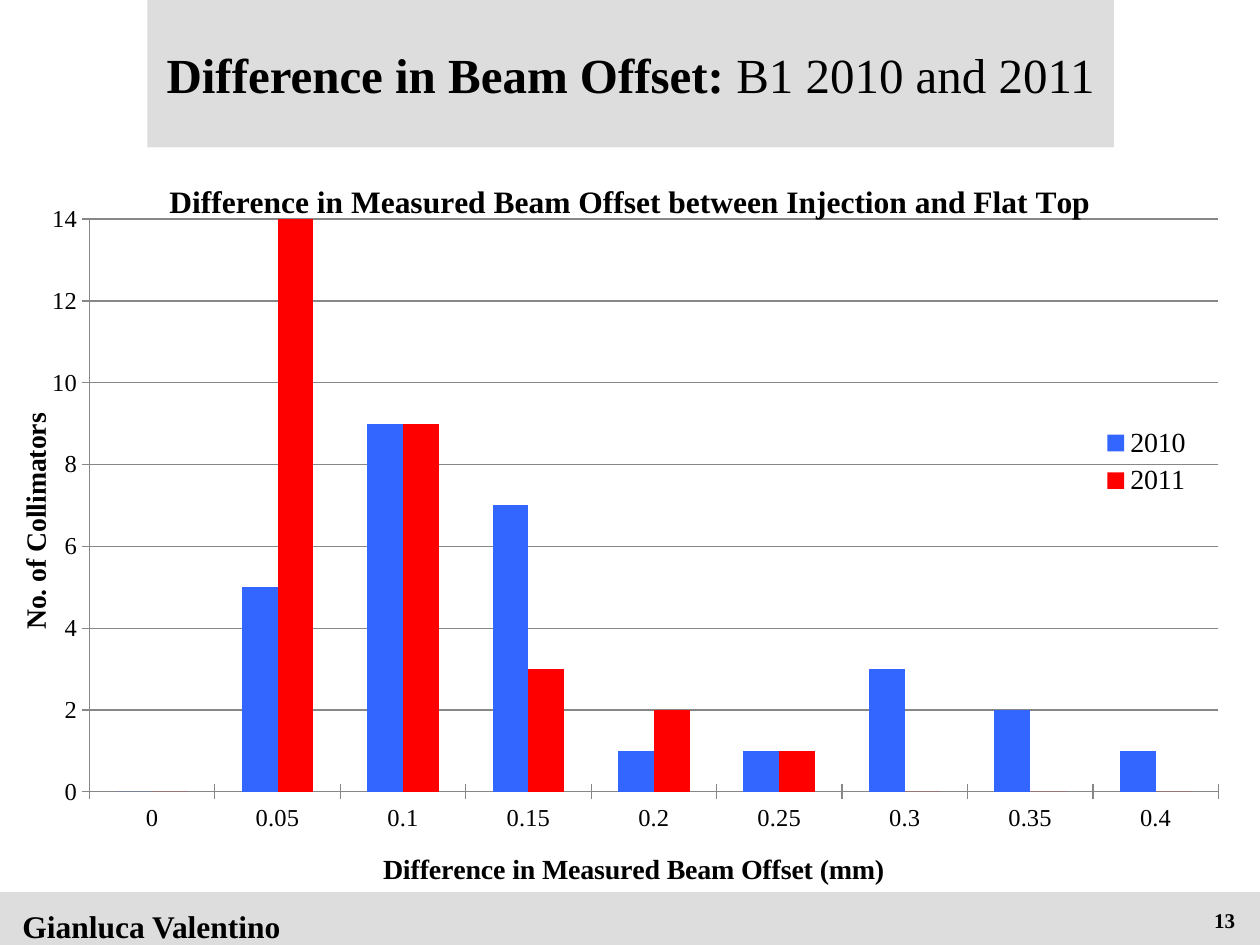
from lxml import etree
from pptx import Presentation
from pptx.chart.data import CategoryChartData
from pptx.dml.color import RGBColor
from pptx.enum.chart import XL_CHART_TYPE, XL_LEGEND_POSITION, XL_TICK_MARK
from pptx.enum.shapes import MSO_SHAPE
from pptx.enum.text import MSO_ANCHOR, PP_ALIGN
from pptx.oxml.ns import qn
from pptx.util import Inches, Pt

COLUMNS = XL_CHART_TYPE.COLUMN_CLUSTERED
LEGEND_RIGHT = XL_LEGEND_POSITION.RIGHT
CROSS = XL_TICK_MARK.CROSS
MIDDLE = MSO_ANCHOR.MIDDLE
LEFT, CENTER, RIGHT = PP_ALIGN.LEFT, PP_ALIGN.CENTER, PP_ALIGN.RIGHT
TITLE_ONLY = 5

FONT = "Times New Roman"
BLACK, BAND, AXIS = "000000", "DDDDDD", "878787"
CATEGORIES = ["0", "0.05", "0.1", "0.15", "0.2", "0.25", "0.3", "0.35", "0.4"]
SERIES = [
    ("2010", "3366FF", [0, 5, 9, 7, 1, 1, 3, 2, 1]),
    ("2011", "FF0000", [0, 14, 9, 3, 2, 1, 0, 0, 0]),
]


def rgb(color):
    return RGBColor.from_string(color)


def set_layout(element, index, inner=False, **place):
    """Place a chart part by fractions of the chart; index is the schema position."""
    for old in element.findall(qn("c:layout")):
        element.remove(old)
    layout = etree.Element(qn("c:layout"))
    manual = etree.SubElement(layout, qn("c:manualLayout"))
    if inner:
        etree.SubElement(manual, qn("c:layoutTarget"), val="inner")
    for name in ("xMode", "yMode"):
        etree.SubElement(manual, qn(f"c:{name}"), val="edge")
    for name, value in place.items():
        etree.SubElement(manual, qn(f"c:{name}"), val=str(value))
    element.insert(index, layout)


class SlideBuilder:
    def __init__(self, deck):
        self.slide = deck.slides.add_slide(deck.slide_layouts[TITLE_ONLY])

    def style(self, font, size, bold):
        font.name, font.size, font.bold = FONT, Pt(size), bold
        font.color.rgb = rgb(BLACK)

    def band(self, left, top, width, height):
        band = self.slide.shapes.add_shape(
            MSO_SHAPE.RECTANGLE, Inches(left), Inches(top), Inches(width), Inches(height))
        band.shadow.inherit = False
        band.fill.solid()
        band.fill.fore_color.rgb = rgb(BAND)
        band.line.fill.background()

    def title(self, left, top, width, height, lead, rest):
        title = self.slide.shapes.title
        title.left, title.top = Inches(left), Inches(top)
        title.width, title.height = Inches(width), Inches(height)
        title.fill.solid()
        title.fill.fore_color.rgb = rgb(BAND)
        title.text_frame.vertical_anchor = MIDDLE
        para = title.text_frame.paragraphs[0]
        para.alignment = CENTER
        for text, bold in ((lead, True), (rest, False)):
            span = para.add_run()
            span.text = text
            self.style(span.font, 28, bold)

    def text(self, left, top, width, height, text, size, align):
        box = self.slide.shapes.add_textbox(
            Inches(left), Inches(top), Inches(width), Inches(height))
        box.text_frame.word_wrap = True
        para = box.text_frame.paragraphs[0]
        para.text = text
        para.alignment = align
        self.style(para.font, size, True)

    def chart_title(self, owner, text, size, x, y):
        """Title a chart or an axis."""
        title = owner.chart_title if hasattr(owner, "chart_title") else owner.axis_title
        para = title.text_frame.paragraphs[0]
        para.text = text
        self.style(para.font, size, True)
        set_layout(title._element, 1, x=x, y=y)

    def axis(self, axis):
        axis.major_tick_mark = XL_TICK_MARK.OUTSIDE
        axis.minor_tick_mark = XL_TICK_MARK.NONE
        axis.format.line.color.rgb = rgb(AXIS)
        self.style(axis.tick_labels.font, 14, False)

    def column_chart(self, left, top, width, height):
        data = CategoryChartData()
        data.categories = CATEGORIES
        for name, _, values in SERIES:
            data.add_series(name, values)
        chart = self.slide.shapes.add_chart(
            COLUMNS, Inches(left), Inches(top), Inches(width), Inches(height), data).chart
        self.style(chart.font, 10, False)

        plot = chart.plots[0]
        plot.vary_by_categories = False
        plot.gap_width, plot.overlap = 150, 0
        for series, (_, color, _) in zip(plot.series, SERIES):
            series.format.fill.solid()
            series.format.fill.fore_color.rgb = rgb(color)
        set_layout(chart._chartSpace.chart.plotArea, 0, inner=True,
                   x=0.071, y=0.097, w=0.896, h=0.774)

        offsets, counts = chart.category_axis, chart.value_axis
        for axis in (offsets, counts):
            self.axis(axis)
            axis.major_tick_mark = CROSS
        counts.minimum_scale, counts.maximum_scale, counts.major_unit = 0, 14, 2
        counts.major_gridlines.format.line.color.rgb = rgb(AXIS)

        self.chart_title(
            chart, "Difference in Measured Beam Offset between Injection and Flat Top",
            18, 0.13, 0.04)
        self.chart_title(offsets, "Difference in Measured Beam Offset (mm)", 16, 0.3, 0.945)
        self.chart_title(counts, "No. of Collimators", 16, 0.01, 0.355)

        chart.has_legend = True
        chart.legend.position = LEGEND_RIGHT
        chart.legend.include_in_layout = False
        self.style(chart.legend.font, 16, False)
        set_layout(chart.legend._element, 1, x=0.86, y=0.37, w=0.1, h=0.11)


def main():
    deck = Presentation()
    deck.slide_width, deck.slide_height = Inches(10), Inches(7.5)
    page = SlideBuilder(deck)
    page.band(0, 7.08, 10, 0.42)
    page.title(1.17, 0, 7.67, 1.17, "Difference in Beam Offset: ", "B1 2010 and 2011")
    page.text(0.08, 7.15, 2.32, 0.33, "Gianluca Valentino", 18, LEFT)
    page.text(7.58, 7.15, 2.32, 0.3, "13", 12, RIGHT)
    page.column_chart(0, 1.17, 10, 5.93)
    deck.save("out.pptx")


if __name__ == "__main__":
    main()
